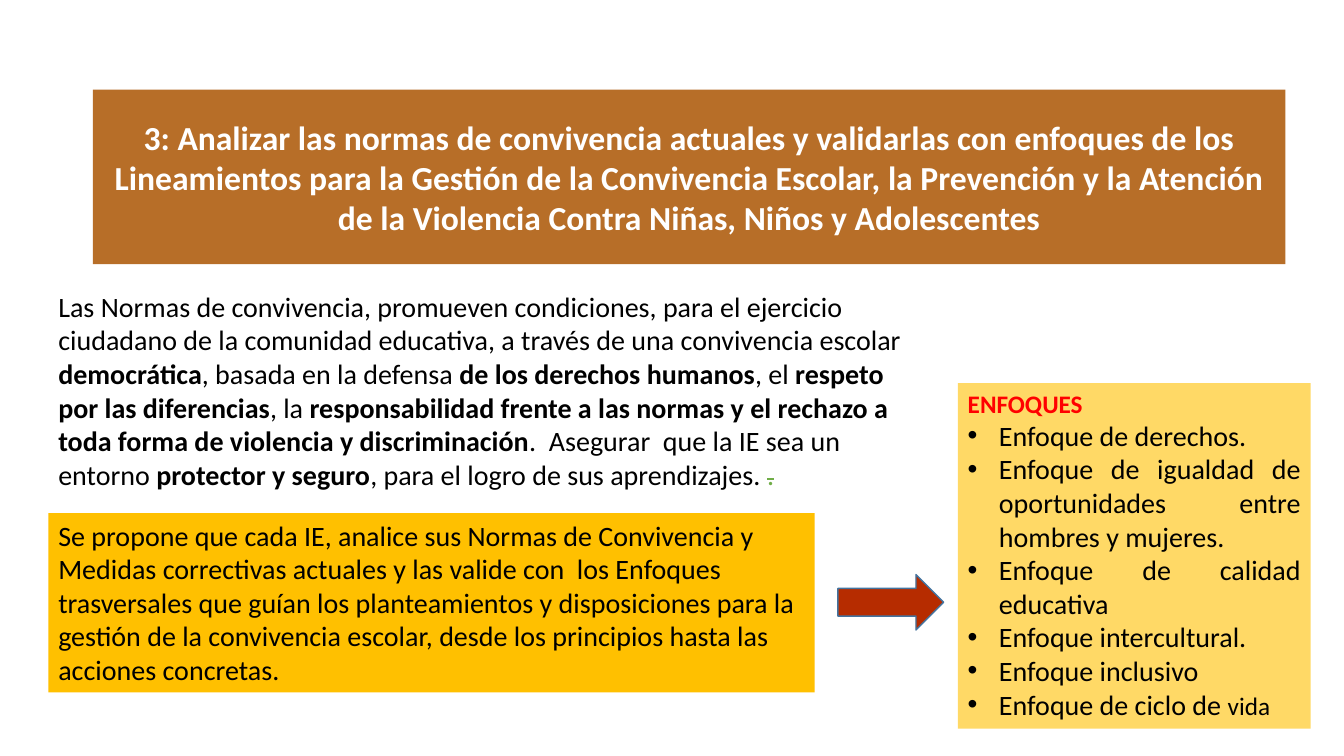
from dataclasses import dataclass

from lxml import etree
from pptx import Presentation
from pptx.dml.color import RGBColor
from pptx.enum.shapes import MSO_SHAPE
from pptx.enum.text import MSO_ANCHOR, MSO_AUTO_SIZE, PP_ALIGN
from pptx.oxml.ns import qn
from pptx.util import Inches, Pt

RECTANGLE = MSO_SHAPE.RECTANGLE
RIGHT_ARROW = MSO_SHAPE.RIGHT_ARROW
TOP, MIDDLE = MSO_ANCHOR.TOP, MSO_ANCHOR.MIDDLE
LEFT, CENTER, JUSTIFY = PP_ALIGN.LEFT, PP_ALIGN.CENTER, PP_ALIGN.JUSTIFY
NO_AUTOFIT = MSO_AUTO_SIZE.NONE
TITLE_ONLY = 5


@dataclass(frozen=True)
class Theme:
    font: str = "Calibri"
    title_size: int = 24
    body_size: int = 20
    small_size: int = 18
    white: str = "FFFFFF"
    black: str = "000000"
    red: str = "FF0000"
    green: str = "70AD47"
    banner: str = "B76E28"
    proposal: str = "FFC000"
    approaches: str = "FFD966"
    arrow: str = "B62C00"
    arrow_line: str = "43739E"


THEME = Theme()

TITLE = (
    "3: Analizar las normas de convivencia actuales y validarlas con enfoques de los "
    "Lineamientos para la Gestión de la Convivencia Escolar, la Prevención y la Atención "
    "de la Violencia Contra Niñas, Niños y Adolescentes"
)
NORMS = [
    ("Las Normas de convivencia, promueven condiciones, para el ejercicio ciudadano de la "
     "comunidad educativa, a través de una convivencia escolar ", False),
    ("democrática", True),
    (", basada en la defensa ", False),
    ("de los derechos humanos", True),
    (", el ", False),
    ("respeto por las diferencias", True),
    (", la ", False),
    ("responsabilidad frente a las normas y el rechazo a toda forma de violencia y "
     "discriminación", True),
    (".  Asegurar  que la IE sea un entorno ", False),
    ("protector y seguro", True),
    (", para el logro de sus aprendizajes. ", False),
]
PROPOSAL = (
    "Se propone que cada IE, analice sus Normas de Convivencia y Medidas correctivas actuales "
    "y las valide con  los Enfoques trasversales que guían los planteamientos y disposiciones "
    "para la gestión de la convivencia escolar, desde los principios hasta las acciones concretas."
)
APPROACHES = [
    "Enfoque de derechos.",
    "Enfoque de igualdad de oportunidades entre hombres y mujeres.",
    "Enfoque de calidad educativa",
    "Enfoque intercultural.",
    "Enfoque inclusivo",
]
LAST_APPROACH = ("Enfoque de ciclo de ", "vida")


def color(value):
    return RGBColor.from_string(value)


def set_font(font, size, ink, bold=False):
    font.name = THEME.font
    font.size = Pt(size)
    font.bold = bold
    font.color.rgb = color(ink)


def set_fill(shape, value):
    shape.fill.solid()
    shape.fill.fore_color.rgb = color(value)


def add_panel(page, box, fill):
    panel = page.shapes.add_shape(RECTANGLE, *map(Inches, box))
    panel.shadow.inherit = False
    set_fill(panel, fill)
    panel.line.fill.background()
    panel.text_frame.word_wrap = True
    panel.text_frame.vertical_anchor = TOP
    return panel


def add_bullet(para, indent):
    properties = para._p.get_or_add_pPr()
    properties.set("marL", str(Inches(indent)))
    properties.set("indent", str(-Inches(indent)))
    etree.SubElement(properties, qn("a:buFont")).set("typeface", "Arial")
    etree.SubElement(properties, qn("a:buChar")).set("char", "•")


def place_title(page, box):
    title = page.shapes.title
    title.left, title.top, title.width, title.height = map(Inches, box)
    set_fill(title, THEME.banner)
    frame = title.text_frame
    frame.text = TITLE
    frame.word_wrap = True
    frame.auto_size = NO_AUTOFIT
    frame.vertical_anchor = MIDDLE
    para = frame.paragraphs[0]
    para.alignment = CENTER
    para.line_spacing = 1.0
    set_font(para.font, THEME.title_size, THEME.white, True)


def place_norms(page, box):
    frame = page.shapes.add_textbox(*map(Inches, box)).text_frame
    frame.word_wrap = True
    para = frame.paragraphs[0]
    for words, bold in NORMS:
        span = para.add_run()
        span.text = words
        set_font(span.font, THEME.body_size, THEME.black, bold)
    struck = para.add_run()
    struck.text = "."
    set_font(struck.font, THEME.body_size, THEME.green)
    struck.font._element.set("strike", "sngStrike")


def place_approaches(page, box):
    frame = add_panel(page, box, THEME.approaches).text_frame
    heading = frame.paragraphs[0]
    heading.text = "ENFOQUES"
    heading.alignment = JUSTIFY
    set_font(heading.font, THEME.small_size, THEME.red, True)
    for words in APPROACHES:
        para = frame.add_paragraph()
        para.text = words
        para.alignment = JUSTIFY
        add_bullet(para, 0.31)
        set_font(para.font, THEME.body_size, THEME.black)
    last = frame.add_paragraph()
    last.alignment = LEFT
    add_bullet(last, 0.31)
    for words, size in zip(LAST_APPROACH, (THEME.body_size, THEME.small_size)):
        span = last.add_run()
        span.text = words
        set_font(span.font, size, THEME.black)


def place_proposal(page, box):
    para = add_panel(page, box, THEME.proposal).text_frame.paragraphs[0]
    para.text = PROPOSAL
    para.alignment = LEFT
    set_font(para.font, THEME.body_size, THEME.black)


def place_arrow(page, box):
    arrow = page.shapes.add_shape(RIGHT_ARROW, *map(Inches, box))
    arrow.shadow.inherit = False
    set_fill(arrow, THEME.arrow)
    arrow.line.color.rgb = color(THEME.arrow_line)
    arrow.line.width = Pt(1)


def main():
    deck = Presentation()
    deck.slide_width, deck.slide_height = Inches(13.33), Inches(7.5)
    page = deck.slides.add_slide(deck.slide_layouts[TITLE_ONLY])
    place_title(page, (0.92, 0.89, 11.83, 1.73))
    place_norms(page, (0.48, 2.82, 8.56, 2.46))
    place_approaches(page, (9.5, 3.8, 3.5, 3.43))
    place_proposal(page, (0.48, 5.09, 7.6, 1.78))
    place_arrow(page, (8.31, 5.7, 1.05, 0.55))
    deck.save("out.pptx")


if __name__ == "__main__":
    main()
